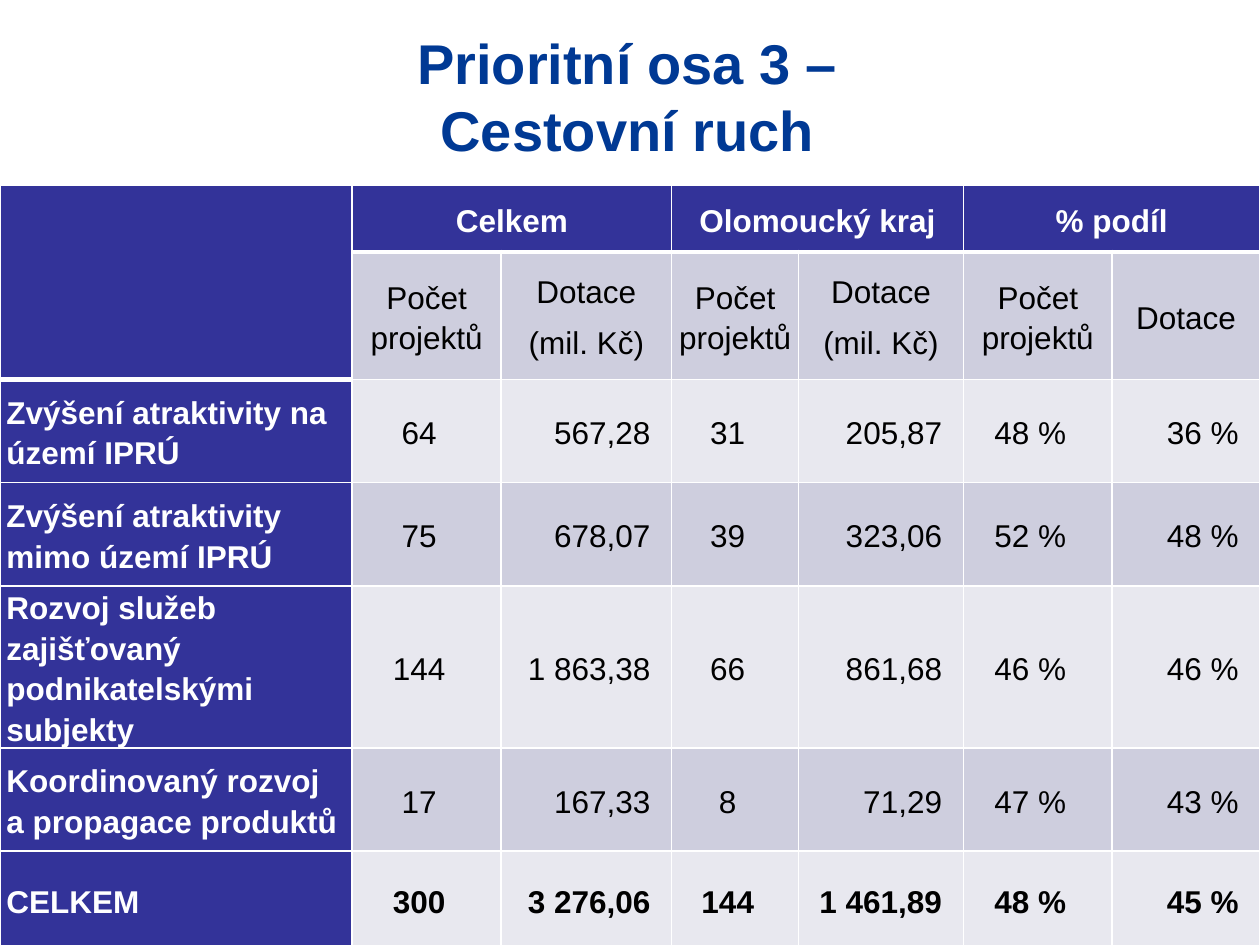
"""Build the slide with subsidy totals for priority axis 3."""
from dataclasses import dataclass

from lxml import etree
from pptx import Presentation
from pptx import util as u
from pptx.dml.color import RGBColor
from pptx.enum import text as t
from pptx.oxml import ns

TITLE_BLUE = RGBColor(0x00, 0x39, 0x94)
HEAD_BLUE = RGBColor(0x33, 0x33, 0x99)
BAND_DARK = RGBColor(0xCE, 0xCE, 0xDE)
BAND_LIGHT = RGBColor(0xE8, 0xE8, 0xEF)
WHITE = RGBColor(0xFF, 0xFF, 0xFF)
BLACK = RGBColor(0x00, 0x00, 0x00)
FONT = "Arial"
LEFT, CENTER, RIGHT = t.PP_ALIGN.LEFT, t.PP_ALIGN.CENTER, t.PP_ALIGN.RIGHT

COL_WIDTHS = [7.1, 3.0, 3.44, 2.56, 3.32, 3.0, 2.98]
ROW_HEIGHTS = [1.35, 2.57, 2.08, 2.08, 3.18, 2.08, 1.98]
COUNT, GRANT = "Počet projektů", "Dotace\n(mil. Kč)"
ROWS = [
    ["", "Celkem", "", "Olomoucký kraj", "", "% podíl", ""],
    ["", COUNT, GRANT, COUNT, GRANT, COUNT, "Dotace"],
    ["Zvýšení atraktivity na území IPRÚ", "64", "567,28", "31", "205,87", "48 %", "36 %"],
    ["Zvýšení atraktivity mimo území IPRÚ", "75", "678,07", "39", "323,06", "52 %", "48 %"],
    ["Rozvoj služeb zajišťovaný podnikatelskými subjekty",
     "144", "1 863,38", "66", "861,68", "46 %", "46 %"],
    ["Koordinovaný rozvoj a propagace produktů", "17", "167,33", "8", "71,29", "47 %", "43 %"],
    ["CELKEM", "300", "3 276,06", "144", "1 461,89", "48 %", "45 %"],
]
TOTAL = len(ROWS) - 1


@dataclass(frozen=True)
class CellStyle:
    fill: RGBColor
    color: RGBColor
    bold: bool
    align: t.PP_ALIGN
    space_after: int = 6
    margin_right: float = 0.13


def style_for(row: int, col: int) -> CellStyle:
    """Return the look of a cell from its place in the table."""
    if row == 0:
        return CellStyle(HEAD_BLUE, WHITE, True, CENTER)
    if col == 0:
        return CellStyle(HEAD_BLUE, WHITE, True, LEFT, 6 if row == TOTAL else 0)
    band = BAND_DARK if row % 2 else BAND_LIGHT
    if row == 1:
        return CellStyle(band, BLACK, False, CENTER)
    align = CENTER if col % 2 else RIGHT
    return CellStyle(band, BLACK, row == TOTAL, align, margin_right=0.43)


def add_borders(cell, top: float, bottom: float) -> None:
    """Draw white borders with the given top and bottom widths in points."""
    tc_pr = cell._tc.get_or_add_tcPr()
    for side, width in zip("LRTB", (1, 1, top, bottom)):
        ln = etree.SubElement(tc_pr, ns.qn(f"a:ln{side}"), w=str(u.Pt(width)))
        fill = etree.SubElement(ln, ns.qn("a:solidFill"))
        etree.SubElement(fill, ns.qn("a:srgbClr"), val=str(WHITE))


def format_text(tf, size: float, color: RGBColor, bold: bool, align: t.PP_ALIGN) -> None:
    """Apply one font and alignment to every paragraph."""
    for p in tf.paragraphs:
        p.alignment = align
        for r in p.runs:
            r.font.name, r.font.size, r.font.bold = FONT, u.Pt(size), bold
            r.font.color.rgb = color


def fill_cell(cell, value: str, row: int, col: int) -> None:
    """Write and format one table cell."""
    style = style_for(row, col)
    head_end = 1 if col == 0 else 0
    add_borders(cell, 3 if row == head_end + 1 else 1, 3 if row <= head_end else 1)
    cell.fill.solid()
    cell.fill.fore_color.rgb = style.fill
    cell.vertical_anchor = t.MSO_ANCHOR.MIDDLE
    cell.margin_left, cell.margin_right = u.Cm(0.13), u.Cm(style.margin_right)
    cell.margin_top = cell.margin_bottom = 0
    if value:
        tf = cell.text_frame
        tf.text = value
        format_text(tf, 18, style.color, style.bold, style.align)
        for p in tf.paragraphs:
            p.line_spacing, p.space_after = 1.15, u.Pt(style.space_after)


def add_title(s) -> None:
    """Place the slide title."""
    sp = s.shapes.title
    sp.left, sp.top, sp.width, sp.height = u.Cm(6.15), u.Cm(0.33), u.Cm(13), u.Cm(3.18)
    tf = sp.text_frame
    tf.text = "Prioritní osa 3 – Cestovní ruch"
    tf.word_wrap, tf.auto_size = True, t.MSO_AUTO_SIZE.NONE
    tf.vertical_anchor = t.MSO_ANCHOR.MIDDLE
    format_text(tf, 32, TITLE_BLUE, True, CENTER)


def add_grants_table(s) -> None:
    """Place the table of projects and subsidies."""
    frame = s.shapes.add_table(len(ROWS), len(COL_WIDTHS), 0, u.Cm(3.73),
                               u.Cm(sum(COL_WIDTHS)), u.Cm(sum(ROW_HEIGHTS)))
    table = frame.table
    for column, width in zip(table.columns, COL_WIDTHS):
        column.width = u.Cm(width)
    for line, height in zip(table.rows, ROW_HEIGHTS):
        line.height = u.Cm(height)
    for row, values in enumerate(ROWS):
        for col, value in enumerate(values):
            fill_cell(table.cell(row, col), value, row, col)
    table.cell(0, 0).merge(table.cell(1, 0))
    for col in (1, 3, 5):
        table.cell(0, col).merge(table.cell(0, col + 1))


def main() -> None:
    """Create and save the presentation."""
    prs = Presentation()
    prs.slide_width, prs.slide_height = u.Cm(25.4), u.Cm(19.05)
    s = prs.slides.add_slide(prs.slide_layouts[5])
    add_title(s)
    add_grants_table(s)
    prs.save("out.pptx")


if __name__ == "__main__":
    main()
